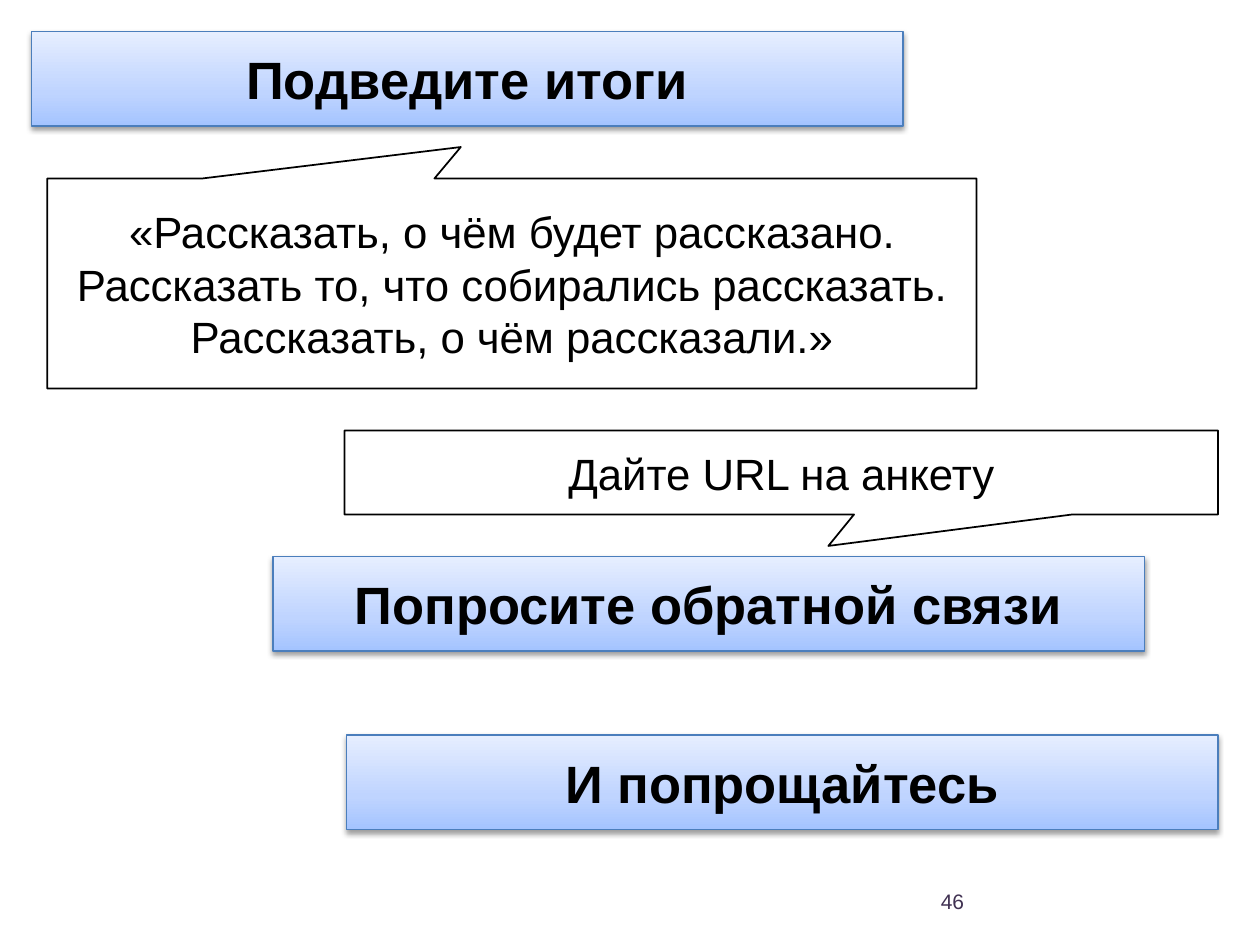
from copy import deepcopy

from lxml.etree import SubElement
from pptx import Presentation
from pptx.dml.color import RGBColor as Color
from pptx.enum.shapes import MSO_SHAPE as Shape
from pptx.enum.text import MSO_ANCHOR as Anchor, PP_ALIGN as Align
from pptx.oxml.ns import qn
from pptx.util import Inches, Pt

COLUMNS, ROWS = 120, 90
WIDTH, HEIGHT = Inches(10), Inches(7.5)
COLORS = {
    "text": "000000",
    "page": "403152",
    "paper": "FFFFFF",
    "callout_line": "000000",
    "banner_line": "4B7EBC",
    "banner_low": "A4C4FF",
    "banner_middle": "BFD4FF",
    "banner_high": "E6EEFF",
    "shadow": "000000",
}


def color(name):
    return Color.from_string(COLORS[name])


def place(box):
    left, top, width, height = box
    return (
        round(left * WIDTH / COLUMNS),
        round(top * HEIGHT / ROWS),
        round(width * WIDTH / COLUMNS),
        round(height * HEIGHT / ROWS),
    )


def write(shape, text, size, ink="text", bold=False, align=Align.CENTER):
    frame = shape.text_frame
    frame.word_wrap = True
    frame.vertical_anchor = Anchor.MIDDLE
    paragraph = frame.paragraphs[0]
    paragraph.alignment = align
    run = paragraph.add_run()
    run.text = text
    run.font.name = "Arial"
    run.font.size = Pt(size)
    run.font.bold = bold
    run.font.color.rgb = color(ink)


def add_outlined(slide, kind, box, line, width):
    shape = slide.shapes.add_shape(kind, *place(box))
    shape.line.color.rgb = color(line)
    shape.line.width = Pt(width)
    shape.shadow.inherit = False
    return shape


def fill_gradient(shape):
    shape.fill.gradient()
    shape.fill.gradient_angle = 90
    stop_list = shape.element.spPr.find(".//" + qn("a:gsLst"))
    stop_list.append(deepcopy(stop_list[-1]))
    names = ("banner_low", "banner_middle", "banner_high")
    for stop, name, position in zip(shape.fill.gradient_stops, names, (0, 0.35, 1)):
        stop.color.rgb = color(name)
        stop.position = position


def cast_shadow(shape):
    effects = shape.element.spPr.find(qn("a:effectLst"))
    shadow = SubElement(
        effects,
        qn("a:outerShdw"),
        blurRad=str(Pt(3.1)),
        dist=str(Pt(1.6)),
        dir="5400000",
        rotWithShape="0",
    )
    tint = SubElement(shadow, qn("a:srgbClr"), val=COLORS["shadow"])
    SubElement(tint, qn("a:alpha"), val="38000")


def add_banner(slide, box, text):
    shape = add_outlined(slide, Shape.RECTANGLE, box, "banner_line", 0.75)
    fill_gradient(shape)
    cast_shadow(shape)
    write(shape, text, 30, bold=True)


def add_callout(slide, box, text, tip):
    shape = add_outlined(slide, Shape.RECTANGULAR_CALLOUT, box, "callout_line", 1)
    shape.fill.solid()
    shape.fill.fore_color.rgb = color("paper")
    shape.adjustments[0], shape.adjustments[1] = tip
    write(shape, text, 25)


def add_page_number(slide, box, number):
    shape = slide.shapes.add_textbox(*place(box))
    write(shape, number, 12, ink="page", align=Align.RIGHT)


def main():
    presentation = Presentation()
    presentation.slide_width, presentation.slide_height = WIDTH, HEIGHT
    slide = presentation.slides.add_slide(presentation.slide_layouts[6])

    banners = (
        (3, 3, "Подведите итоги"),
        (26, 53, "Попросите обратной связи"),
        (33, 70, "И попрощайтесь"),
    )
    for left, top, text in banners:
        add_banner(slide, (left, top, 83, 9), text)

    add_callout(
        slide,
        (4.5, 17, 88.5, 20),
        "«Рассказать, о чём будет рассказано. Рассказать то, что собирались "
        "рассказать. Рассказать, о чём рассказали.»",
        (-0.055, -0.65),
    )
    add_callout(slide, (32.8, 41, 83.2, 8), "Дайте URL на анкету", (0.054, 0.875))
    add_page_number(slide, (65, 83.4, 28, 4.8), "46")

    presentation.save("out.pptx")


if __name__ == "__main__":
    main()
